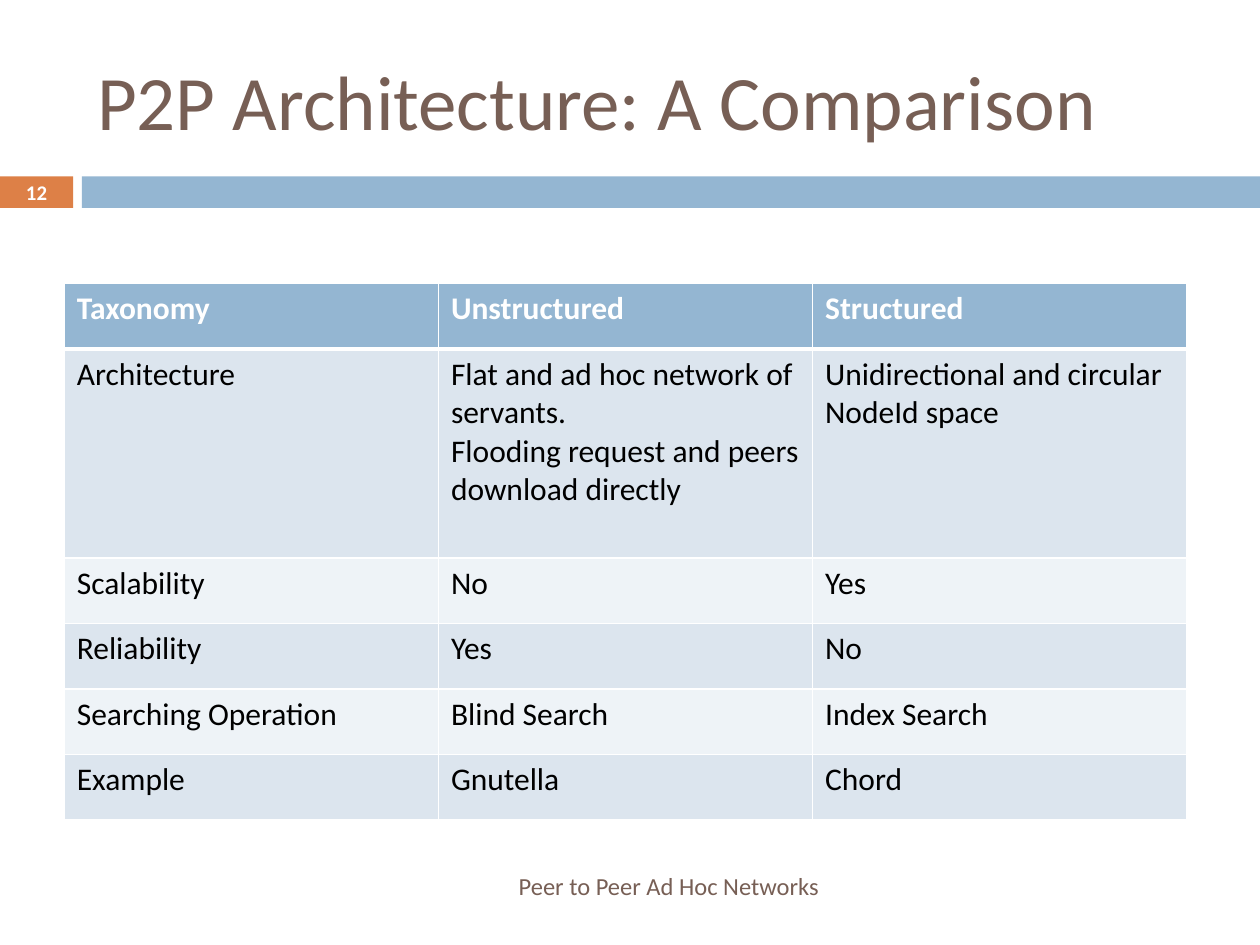
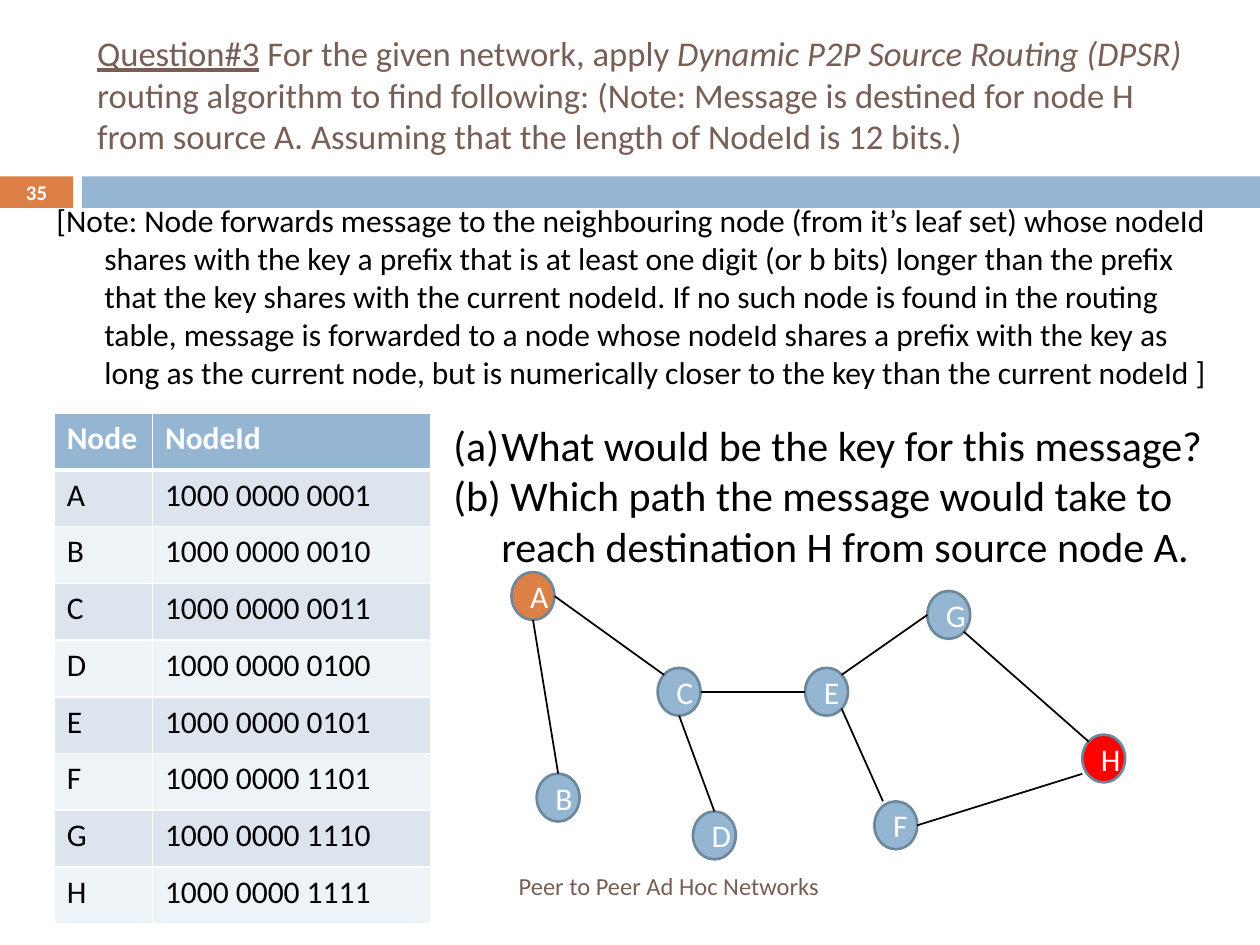
from lxml.etree import SubElement
from pptx import Presentation
from pptx.dml.color import RGBColor
from pptx.enum.shapes import MSO_CONNECTOR, MSO_SHAPE
from pptx.enum.text import MSO_ANCHOR, MSO_AUTO_SIZE, PP_ALIGN
from pptx.oxml.ns import qn
from pptx.util import Inches, Pt

FONT = "Calibri"
BROWN = RGBColor(0x77, 0x5F, 0x55)
ORANGE = RGBColor(0xDD, 0x80, 0x47)
BLUE = RGBColor(0x94, 0xB6, 0xD2)
OUTLINE = RGBColor(0x6D, 0x87, 0x9B)
ROW_DARK = RGBColor(0xDC, 0xE5, 0xEE)
ROW_LIGHT = RGBColor(0xEE, 0xF3, 0xF7)
RED = RGBColor(0xFF, 0x00, 0x00)
WHITE = RGBColor(0xFF, 0xFF, 0xFF)
BLACK = RGBColor(0x00, 0x00, 0x00)

FOOTER = "Peer to Peer Ad Hoc Networks"

COMPARISON = [
    ["Taxonomy", "Unstructured", "Structured"],
    ["Architecture",
     "Flat and ad hoc network of servants.\n"
     "Flooding request and peers download directly",
     "Unidirectional and circular NodeId space"],
    ["Scalability", "No", "Yes"],
    ["Reliability", "Yes", "No"],
    ["Searching Operation", "Blind Search", "Index Search"],
    ["Example", "Gnutella", "Chord"],
]

NODE_IDS = [
    ["Node", "NodeId"],
    ["A", "1000 0000 0001"],
    ["B", "1000 0000 0010"],
    ["C", "1000 0000 0011"],
    ["D", "1000 0000 0100"],
    ["E", "1000 0000 0101"],
    ["F", "1000 0000 1101"],
    ["G", "1000 0000 1110"],
    ["H", "1000 0000 1111"],
]

ROUTING_NOTE = (
    "[Note: Node forwards message to the neighbouring node (from it’s leaf set) "
    "whose nodeId shares with the key a prefix that is at least one digit (or b "
    "bits) longer than the prefix that the key shares with the current nodeId. If "
    "no such node is found in the routing table, message is forwarded to a node "
    "whose nodeId shares a prefix with the key as long as the current node, but is "
    "numerically closer to the key than the current nodeId ]"
)
QUESTIONS = [
    "What would be the key for this message?",
    "(b) Which path the message would take to reach destination H from source node A.",
]

# Network: left and top of each node, and where on the node each link ends
NODE_W, NODE_H = 0.34, 0.38
NODES = {
    "A": (4.06, 4.54), "B": (4.26, 6.14), "C": (5.22, 5.3), "D": (5.5, 6.44),
    "E": (6.39, 5.3), "F": (6.94, 6.36), "G": (7.36, 4.69), "H": (8.59, 5.83),
}
NODE_FILLS = {"A": ORANGE, "H": RED}
TOP, BOTTOM, LEFT, RIGHT = (0.5, 0), (0.5, 1), (0, 0.5), (1, 0.5)
TOP_LEFT, TOP_RIGHT, BOTTOM_RIGHT = (0.15, 0.15), (0.85, 0.15), (0.85, 0.85)
LINKS = [
    ("A", BOTTOM, "B", TOP),
    ("A", RIGHT, "C", TOP_LEFT),
    ("C", RIGHT, "E", LEFT),
    ("C", BOTTOM, "D", TOP),
    ("E", BOTTOM_RIGHT, "F", (0.2, 0)),
    ("E", TOP_RIGHT, "G", LEFT),
    ("F", RIGHT, "H", (0, 0.82)),
    ("G", BOTTOM_RIGHT, "H", TOP_LEFT),
]


def add_run(paragraph, text, size, color, bold=False, italic=False, underline=False):
    run = paragraph.add_run()
    run.text = text
    font = run.font
    font.name, font.size, font.color.rgb = FONT, Pt(size), color
    font.bold, font.italic, font.underline = bold, italic, underline


def add_text(slide, box, paragraphs, size, color, align=PP_ALIGN.LEFT,
             anchor=MSO_ANCHOR.TOP, bold=False):
    frame = slide.shapes.add_textbox(*map(Inches, box)).text_frame
    frame.word_wrap = True
    frame.vertical_anchor = anchor
    for i, text in enumerate(paragraphs):
        paragraph = frame.add_paragraph() if i else frame.paragraphs[0]
        paragraph.alignment = align
        add_run(paragraph, text, size, color, bold)
    return frame


def hang_indent(paragraph, numbering=None):
    properties = paragraph._p.get_or_add_pPr()
    properties.set("marL", str(Inches(0.38)))
    properties.set("indent", str(-Inches(0.38)))
    if numbering:
        SubElement(properties, qn("a:buAutoNum"), type=numbering)


def add_filled_shape(slide, preset, box, fill, outline=None):
    shape = slide.shapes.add_shape(preset, *map(Inches, box))
    shape.shadow.inherit = False
    shape.fill.solid()
    shape.fill.fore_color.rgb = fill
    if outline is None:
        shape.line.fill.background()
    else:
        shape.line.color.rgb = outline
        shape.line.width = Pt(1.5)
    return shape


def add_base_slide(prs, number, title_runs, title_size, title_height):
    """Slide with title, bands, slide number and footer."""
    slide = prs.slides.add_slide(prs.slide_layouts[5])
    title = slide.shapes.title
    title.left, title.top = Inches(0.67), Inches(0.25)
    title.width, title.height = Inches(8.92), Inches(title_height)
    frame = title.text_frame
    frame.word_wrap = True
    frame.auto_size = MSO_AUTO_SIZE.NONE
    frame.vertical_anchor = MSO_ANCHOR.MIDDLE
    frame.paragraphs[0].alignment = PP_ALIGN.LEFT
    for text, style in title_runs:
        add_run(frame.paragraphs[0], text, title_size, BROWN, **style)

    add_filled_shape(slide, MSO_SHAPE.RECTANGLE, (0, 1.4, 0.58, 0.25), ORANGE)
    add_filled_shape(slide, MSO_SHAPE.RECTANGLE, (0.65, 1.4, 9.35, 0.25), BLUE)
    add_text(slide, (0, 1.39, 0.58, 0.27), [number], 11.9, WHITE,
             PP_ALIGN.CENTER, MSO_ANCHOR.MIDDLE, bold=True)
    add_text(slide, (0.67, 6.83, 5.93, 0.4), [FOOTER], 14, BROWN,
             PP_ALIGN.RIGHT, MSO_ANCHOR.MIDDLE)
    return slide


def set_cell_borders(cell, bottom_width):
    properties = cell._tc.get_or_add_tcPr()
    widths = {"a:lnL": 1, "a:lnR": 1, "a:lnT": 1, "a:lnB": bottom_width}
    for position, (tag, width) in enumerate(widths.items()):
        border = SubElement(properties, qn(tag), w=str(Pt(width)))
        fill = SubElement(border, qn("a:solidFill"))
        SubElement(fill, qn("a:srgbClr"), val=str(WHITE))
        properties.insert(position, border)  # borders precede the cell fill


def add_banded_table(slide, left, top, rows, col_widths, row_heights):
    table = slide.shapes.add_table(
        len(rows), len(col_widths), Inches(left), Inches(top),
        Inches(sum(col_widths)), Inches(sum(row_heights))).table
    for column, width in zip(table.columns, col_widths):
        column.width = Inches(width)
    for r, values in enumerate(rows):
        header = r == 0
        table.rows[r].height = Inches(row_heights[r])
        for c, value in enumerate(values):
            cell = table.cell(r, c)
            cell.fill.solid()
            cell.fill.fore_color.rgb = (
                BLUE if header else ROW_DARK if r % 2 else ROW_LIGHT)
            for i, text in enumerate(value.split("\n")):
                frame = cell.text_frame
                paragraph = frame.add_paragraph() if i else frame.paragraphs[0]
                add_run(paragraph, text, 18, WHITE if header else BLACK, bold=header)
            set_cell_borders(cell, 3 if header else 1)


def add_node(slide, label):
    node = add_filled_shape(slide, MSO_SHAPE.OVAL, (*NODES[label], NODE_W, NODE_H),
                            NODE_FILLS.get(label, BLUE), OUTLINE)
    node.text_frame.vertical_anchor = MSO_ANCHOR.MIDDLE
    paragraph = node.text_frame.paragraphs[0]
    paragraph.alignment = PP_ALIGN.CENTER
    add_run(paragraph, label, 18, WHITE)


def node_point(label, site):
    left, top = NODES[label]
    return Inches(left + site[0] * NODE_W), Inches(top + site[1] * NODE_H)


def add_link(slide, source, source_site, target, target_site):
    link = slide.shapes.add_connector(
        MSO_CONNECTOR.STRAIGHT, *node_point(source, source_site),
        *node_point(target, target_site))
    link.line.color.rgb = BLACK
    link.line.width = Pt(1)
    SubElement(link._element.spPr, qn("a:effectLst"))


def build_comparison(prs):
    slide = add_base_slide(prs, "12", [("P2P Architecture: A Comparison", {})], 44, 1.08)
    add_banded_table(slide, 0.51, 2.25, COMPARISON, [2.97] * 3,
                     [0.52, 1.66] + [0.52] * 4)


def build_routing_question(prs):
    title_runs = [
        ("Question#3", {"underline": True}),
        (" For the given network, apply ", {}),
        ("Dynamic P2P Source Routing (DPSR) ", {"italic": True}),
        ("routing algorithm to find following: (Note: Message is destined for node H "
         "from source A. Assuming that the length of NodeId is 12 bits.)", {}),
    ]
    slide = add_base_slide(prs, "35", title_runs, 19.8, 1)

    # Network graph
    for label in NODES:
        add_node(slide, label)
    for link in LINKS:
        add_link(slide, *link)

    # Node table, routing note and questions
    add_banded_table(slide, 0.43, 3.28, NODE_IDS, [0.78, 2.21], [0.45] * len(NODE_IDS))
    note = add_text(slide, (0.35, 1.55, 9.37, 1.6), [ROUTING_NOTE], 18, BLACK)
    hang_indent(note.paragraphs[0])
    questions = add_text(slide, (3.5, 3.28, 6.22, 1.31), QUESTIONS, 24, BLACK)
    hang_indent(questions.paragraphs[0], "alphaLcParenBoth")
    hang_indent(questions.paragraphs[1])


def main():
    prs = Presentation()
    prs.slide_width, prs.slide_height = Inches(10), Inches(7.5)
    build_comparison(prs)
    build_routing_question(prs)
    prs.save("out.pptx")


if __name__ == "__main__":
    main()
